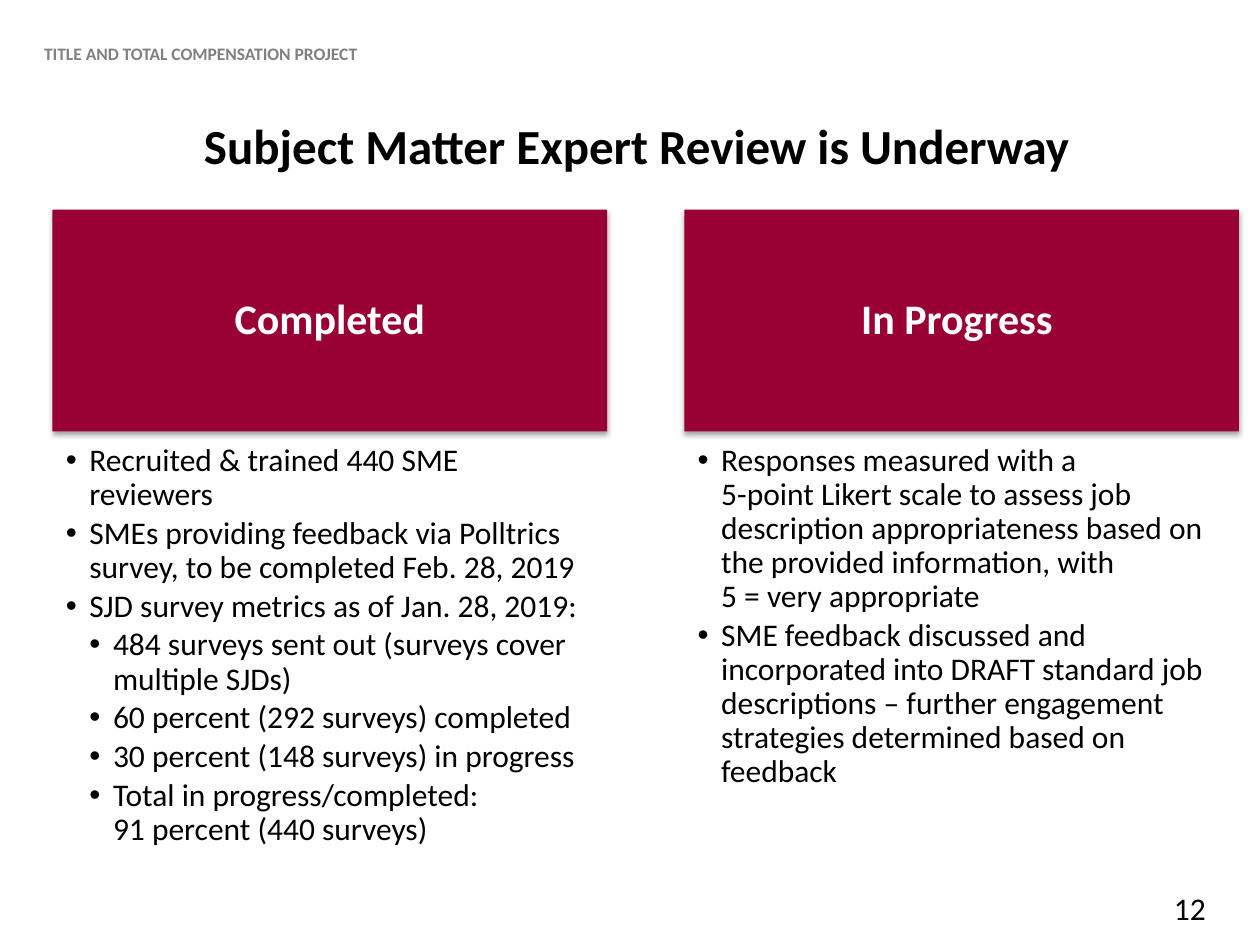
from lxml import etree
from pptx import Presentation
from pptx.dml.color import RGBColor
from pptx.enum.shapes import MSO_SHAPE
from pptx.enum.text import MSO_ANCHOR, MSO_AUTO_SIZE, PP_ALIGN
from pptx.oxml.ns import qn
from pptx.util import Pt

RECT = MSO_SHAPE.RECTANGLE
TOP, MIDDLE = MSO_ANCHOR.TOP, MSO_ANCHOR.MIDDLE
LEFT, CENTER = PP_ALIGN.LEFT, PP_ALIGN.CENTER
FIT_SHAPE = MSO_AUTO_SIZE.SHAPE_TO_FIT_TEXT

CARD_LEFT, CARD_TOP, CARD_W, CARD_H = 30, 119.8, 317, 126.8
CARD_STEP, LIST_H = 361, 260
LIST_INDENT = 13.5

# Each card: heading, then (list level, text) items.
CARDS = [
    ("Completed", [
        (1, "Recruited & trained 440 SME reviewers"),
        (1, "SMEs providing feedback via Polltrics survey, to be completed Feb. 28, 2019"),
        (1, "SJD survey metrics as of Jan. 28, 2019:"),
        (2, "484 surveys sent out (surveys cover multiple SJDs)"),
        (2, "60 percent (292 surveys) completed"),
        (2, "30 percent (148 surveys) in progress"),
        (2, "Total in progress/completed:\n91 percent (440 surveys)"),
    ]),
    ("In Progress ", [
        (1, "Responses measured with a \n5-point Likert scale to assess job description "
            "appropriateness based on the provided information, with \n5 = very appropriate"),
        (1, "SME feedback discussed and incorporated into DRAFT standard job descriptions "
            "– further engagement strategies determined based on feedback"),
    ]),
]


def rgb(value):
    return RGBColor.from_string(value)


class Deck:
    """Holds the style and the current slide."""
    font, black, white, grey, crimson = "Calibri", "000000", "FFFFFF", "808080", "990033"

    def __init__(self, slide):
        self.slide = slide

    def format_runs(self, p, size, color, bold=False):
        for r in p.runs:
            r.font.name, r.font.size, r.font.bold = self.font, Pt(size), bold
            r.font.color.rgb = rgb(color)

    def frame(self, sp, insets, anchor=TOP, wrap=True):
        tf = sp.text_frame
        tf.word_wrap, tf.vertical_anchor = wrap, anchor
        tf.margin_left, tf.margin_top, tf.margin_right, tf.margin_bottom = map(Pt, insets)
        return tf

    def text(self, box, text, size, color, bold=False, align=LEFT, anchor=TOP,
             insets=(7.2, 3.6, 7.2, 3.6), wrap=True):
        sp = self.slide.shapes.add_textbox(*map(Pt, box))
        tf = self.frame(sp, insets, anchor, wrap)
        tf.text = text
        tf.paragraphs[0].alignment = align
        self.format_runs(tf.paragraphs[0], size, color, bold)
        return tf

    def card(self, box, heading):
        sp = self.slide.shapes.add_shape(RECT, *map(Pt, box))
        sp.fill.solid()
        sp.fill.fore_color.rgb = rgb(self.crimson)
        sp.line.fill.background()
        self.drop_shadow(sp)
        tf = self.frame(sp, (13.7, 7.9, 13.7, 7.9), MIDDLE)
        tf.text = heading
        p = tf.paragraphs[0]
        p.alignment, p.line_spacing = CENTER, 0.9
        self.format_runs(p, 24, self.white, True)

    def drop_shadow(self, sp):
        sp.shadow.inherit = False
        effects = sp._element.spPr.find(qn("a:effectLst"))
        shadow = etree.SubElement(effects, qn("a:outerShdw"), blurRad=str(Pt(3.1)),
                                  dist=str(Pt(1.8)), dir="5400000", rotWithShape="0")
        color = etree.SubElement(shadow, qn("a:srgbClr"), val=self.black)
        etree.SubElement(color, qn("a:alpha"), val="35000")

    def bullets(self, box, items):
        sp = self.slide.shapes.add_textbox(*map(Pt, box))
        tf = self.frame(sp, (7.6, 7.4, 12, 11.5))
        for i, (level, text) in enumerate(items):
            p = tf.add_paragraph() if i else tf.paragraphs[0]
            p.text = text
            pPr = p._p.get_or_add_pPr()
            pPr.set("marL", str(Pt(level * LIST_INDENT)))
            pPr.set("indent", str(Pt(-LIST_INDENT)))
            etree.SubElement(pPr, qn("a:buFont"), typeface="Arial")
            etree.SubElement(pPr, qn("a:buChar"), char="•")
            p.level, p.line_spacing, p.space_after = level, 0.9, Pt(2.7)
            self.format_runs(p, 18, self.black)


def main():
    prs = Presentation()
    prs.slide_width, prs.slide_height = Pt(720), Pt(540)
    s = Deck(prs.slides.add_slide(prs.slide_layouts[6]))

    s.text((0, 17.3, 720, 26.6), "TITLE AND TOTAL COMPENSATION PROJECT", 10, s.grey,
           bold=True, anchor=MIDDLE, insets=(25.2, 3.6, 36, 3.6))
    s.text((63.7, 62.6, 600, 33), "Subject Matter Expert Review is Underway", 28, s.black,
           bold=True, align=CENTER)
    for i, (heading, items) in enumerate(CARDS):
        left = CARD_LEFT + i * CARD_STEP
        s.card((left, CARD_TOP, CARD_W, CARD_H), heading)
        s.bullets((left, CARD_TOP + CARD_H, CARD_W, LIST_H), items)
    number = s.text((663.7, 504.3, 33, 29), "12", 18, s.black, wrap=False)
    number.auto_size = FIT_SHAPE

    prs.save("out.pptx")


if __name__ == "__main__":
    main()
